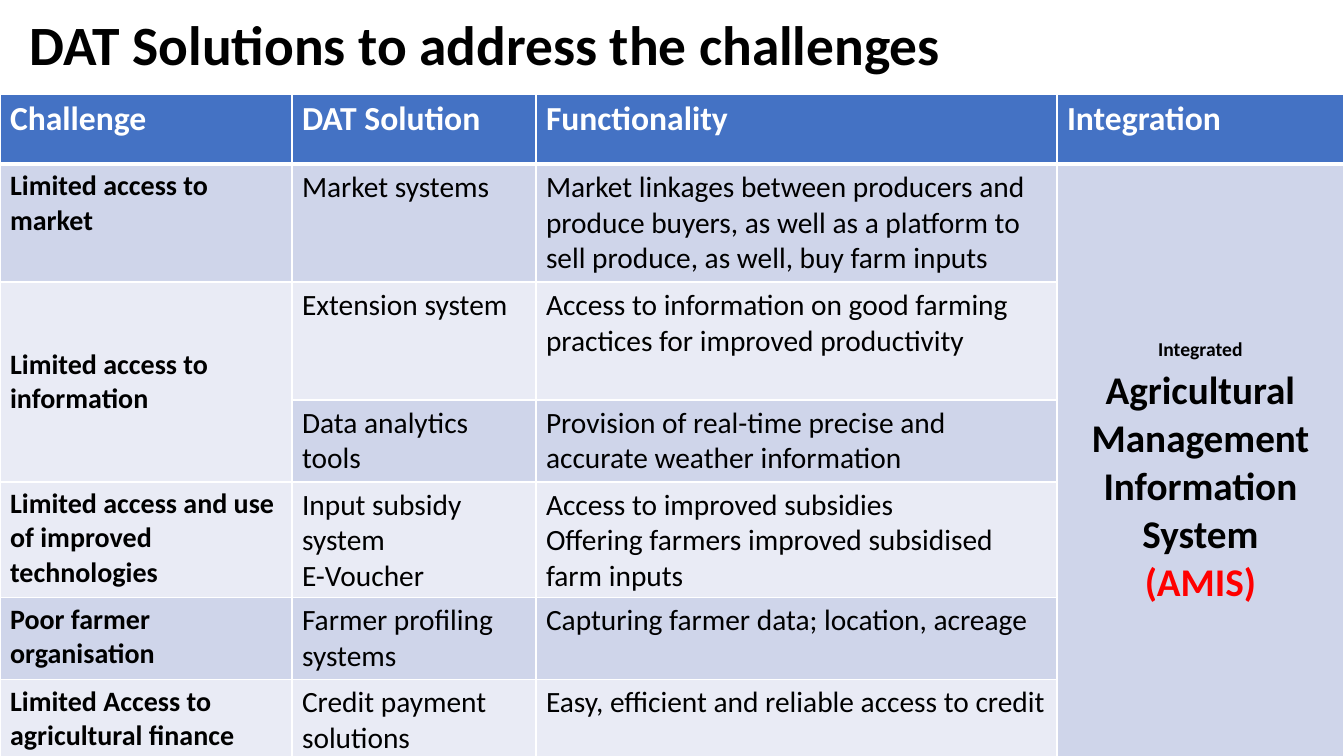
"""Builds the slide on DAT solutions and the farming challenges they address."""
from lxml import etree
from pptx import Presentation
from pptx.dml.color import RGBColor
from pptx.enum.text import MSO_ANCHOR, PP_ALIGN
from pptx.oxml.ns import qn
from pptx.util import Emu, Pt

MIDDLE, TOP = MSO_ANCHOR.MIDDLE, MSO_ANCHOR.TOP
LEFT, CENTER = PP_ALIGN.LEFT, PP_ALIGN.CENTER
FONT = "Calibri"
BLACK, WHITE, RED = "000000", "FFFFFF", "FF0000"
HEADER_FILL = "4472C4"
BANDS = ["E9EBF5", "CFD5EA"]

TITLE = "DAT Solutions to address the challenges"
HEADERS = ["Challenge", "DAT Solution", "Functionality", "Integration"]
ROWS = [
    ("Limited access to market", ["Market systems"],
     ["Market linkages between producers and produce buyers, as well as "
      "a platform to sell produce, as well, buy farm inputs"]),
    ("Limited access to information", ["Extension system"],
     ["Access to information on good farming practices for improved productivity"]),
    (None, ["Data analytics tools"],
     ["Provision of real-time precise and accurate weather information"]),
    ("Limited access and use of improved technologies",
     ["Input subsidy system", "E-Voucher"],
     ["Access to improved subsidies",
      "Offering farmers improved subsidised farm inputs"]),
    ("Poor farmer organisation", ["Farmer profiling systems"],
     ["Capturing farmer data; location, acreage"]),
    ("Limited Access to agricultural finance", ["Credit payment solutions"],
     ["Easy, efficient and reliable access to credit"]),
]
INTEGRATION = [
    [("Integrated", 14, True, BLACK),
     (" Agricultural Management Information System", 28, True, BLACK)],
    [("(AMIS)", 28, True, RED)],
]
SLIDE_W, SLIDE_H = 1344, 756
TITLE_BOX = (20, 16, 1232, 64)
TABLE_TOP = 94
COL_WIDTHS = [292, 244, 521, 287]
ROW_HEIGHTS = [70, 118, 118, 82, 113, 82, 82]


def px(n):
    return Emu(round(n * 914400 / 100.8))


def rgb(color):
    return RGBColor.from_string(color)


def write(tf, paragraphs, align=LEFT):
    for i, runs in enumerate(paragraphs):
        p = tf.paragraphs[0] if i == 0 else tf.add_paragraph()
        p.alignment = align
        for text, size, bold, color in runs:
            r = p.add_run()
            r.text = text
            r.font.name = FONT
            r.font.size = Pt(size)
            r.font.bold = bold
            r.font.color.rgb = rgb(color)


def style_cell(cell, fill, bottom):
    cell.fill.solid()
    cell.fill.fore_color.rgb = rgb(fill)
    tc_pr = cell._tc.get_or_add_tcPr()
    for i, (side, width) in enumerate(
            [("lnL", 1), ("lnR", 1), ("lnT", 1), ("lnB", bottom)]):
        ln = etree.Element(qn(f"a:{side}"), w=str(Pt(width)))
        solid = etree.SubElement(ln, qn("a:solidFill"))
        etree.SubElement(solid, qn("a:srgbClr"), val=WHITE)
        tc_pr.insert(i, ln)


def fill_cell(cell, paragraphs, align=LEFT, anchor=TOP):
    cell.vertical_anchor = anchor
    write(cell.text_frame, paragraphs, align)


def add_title(s):
    tf = s.shapes.add_textbox(*map(px, TITLE_BOX)).text_frame
    tf.word_wrap = True
    tf.vertical_anchor = MIDDLE
    write(tf, [[(TITLE, 39.6, True, BLACK)]])
    tf.paragraphs[0].line_spacing = 0.9


def add_solutions(s):
    n_rows, n_cols = len(ROW_HEIGHTS), len(COL_WIDTHS)
    table = s.shapes.add_table(n_rows, n_cols, px(0), px(TABLE_TOP), px(SLIDE_W),
                               px(sum(ROW_HEIGHTS))).table
    for column, width in zip(table.columns, COL_WIDTHS):
        column.width = px(width)
    for i, (row, height) in enumerate(zip(table.rows, ROW_HEIGHTS)):
        row.height = px(height)
        for cell in row.cells:
            style_cell(cell, BANDS[i % 2] if i else HEADER_FILL, 1 if i else 3)

    table.cell(1, 3).merge(table.cell(n_rows - 1, 3))
    table.cell(2, 0).merge(table.cell(3, 0))

    for j, header in enumerate(HEADERS):
        fill_cell(table.cell(0, j), [[(header, 24, True, WHITE)]])
    for i, (challenge, *details) in enumerate(ROWS, 1):
        if challenge:
            cell = table.cell(i, 0)
            fill_cell(cell, [[(challenge, 20, True, BLACK)]],
                      anchor=MIDDLE if cell.is_merge_origin else TOP)
        for j, lines in enumerate(details, 1):
            fill_cell(table.cell(i, j),
                      [[(line, 21, False, BLACK)] for line in lines])
    fill_cell(table.cell(1, 3), INTEGRATION, CENTER, MIDDLE)


def main():
    prs = Presentation()
    prs.slide_width, prs.slide_height = px(SLIDE_W), px(SLIDE_H)
    s = prs.slides.add_slide(prs.slide_layouts[6])
    add_title(s)
    add_solutions(s)
    prs.save("out.pptx")


if __name__ == "__main__":
    main()
